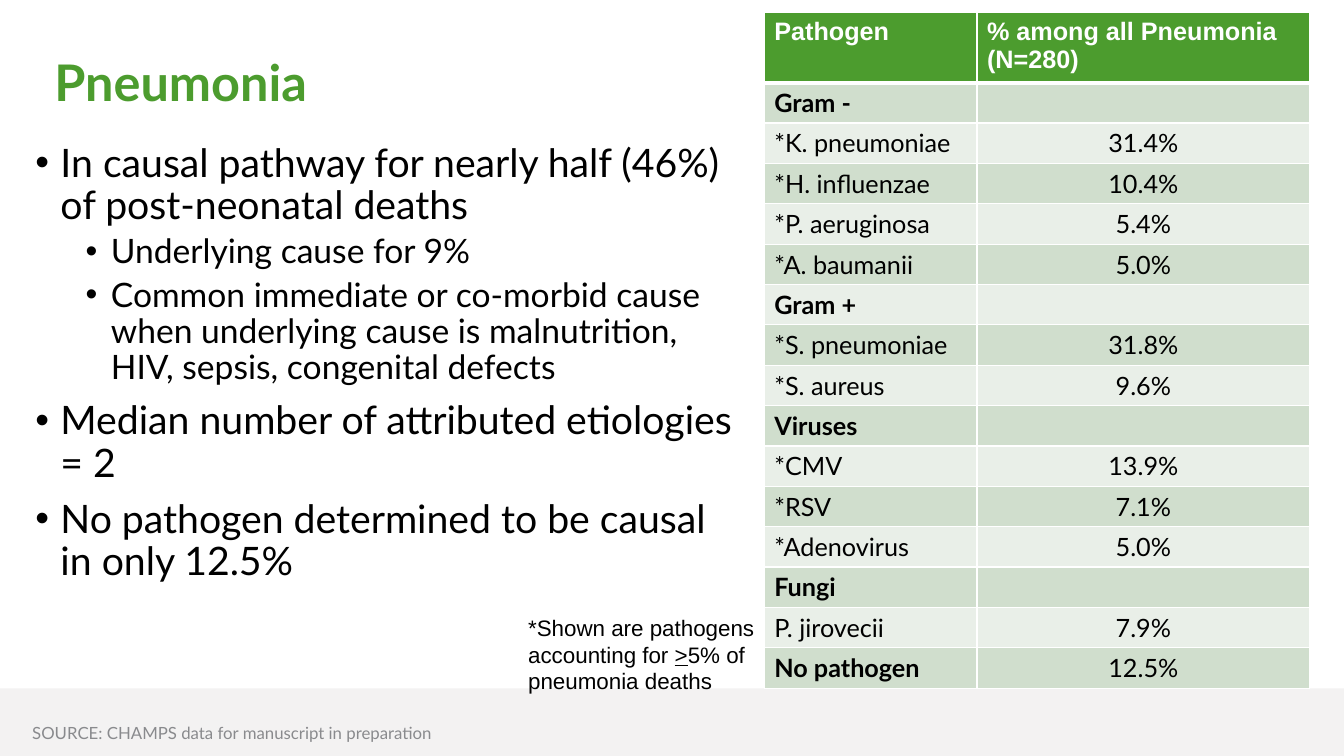
from lxml import etree
from pptx import Presentation
from pptx import util as u
from pptx.dml.color import RGBColor
from pptx.enum import shapes, text
from pptx.oxml import ns

GREEN = RGBColor(0x4C, 0x9C, 0x2E)
BANDS = RGBColor(0xD0, 0xDE, 0xCD), RGBColor(0xE9, 0xEF, 0xE8)
BLACK = RGBColor(0, 0, 0)
WHITE = RGBColor(255, 255, 255)
GRAY = RGBColor(0x89, 0x8A, 0x8D)
STRIP = RGBColor(0xD0, 0xCF, 0xCD)

TITLE = "Pneumonia"
POINTS = [
    (0, "In causal pathway for nearly half (46%) of post-neonatal deaths"),
    (1, "Underlying cause for 9%"),
    (1, "Common immediate or co-morbid cause when underlying cause is "
        "malnutrition, HIV, sepsis, congenital defects"),
    (0, "Median number of attributed etiologies = 2"),
    (0, "No pathogen determined to be causal in only 12.5%"),
]
SOURCE = "SOURCE: CHAMPS data for manuscript in preparation"
NOTE = ["*Shown are pathogens accounting for ", ">", "5% of pneumonia deaths"]
HEAD = ("Pathogen", "% among all Pneumonia (N=280)")
ROWS = [
    ("Gram -", ""),
    ("*K. pneumoniae", "31.4%"),
    ("*H. influenzae", "10.4%"),
    ("*P. aeruginosa", "5.4%"),
    ("*A. baumanii", "5.0%"),
    ("Gram +", ""),
    ("*S. pneumoniae", "31.8%"),
    ("*S. aureus", "9.6%"),
    ("Viruses", ""),
    ("*CMV", "13.9%"),
    ("*RSV", "7.1%"),
    ("*Adenovirus", "5.0%"),
    ("Fungi", ""),
    ("P. jirovecii", "7.9%"),
    ("No pathogen", "12.5%"),
]
COLS = (2.11, 3.3)
HEAD_H, ROW_H = 0.7, 0.4


def place(shape, *box):
    shape.left, shape.top, shape.width, shape.height = map(u.Inches, box)


def style(par, size, color, font="Lato", bold=False):
    for run in par.runs:
        run.font.size = u.Pt(size)
        run.font.name = font
        run.font.bold = bold
        run.font.color.rgb = color


def bullet(par, indent):
    props = par._p.get_or_add_pPr()
    props.set("marL", str(u.Inches(indent)))
    props.set("indent", str(u.Inches(-0.25)))
    etree.SubElement(props, ns.qn("a:buFont")).set("typeface", "Arial")
    etree.SubElement(props, ns.qn("a:buChar")).set("char", "•")


def border(cell, base):
    """Draw white lines round a cell, with the given width below it."""
    props = cell._tc.get_or_add_tcPr()
    for i, (side, width) in enumerate(zip("LRTB", (1, 1, 1, base))):
        line = etree.Element(ns.qn("a:ln" + side), w=str(u.Pt(width)))
        fill = etree.SubElement(line, ns.qn("a:solidFill"))
        etree.SubElement(fill, ns.qn("a:srgbClr")).set("val", str(WHITE))
        props.insert(i, line)


def add_strip(slide):
    strip = slide.shapes.add_shape(
        shapes.MSO_SHAPE.RECTANGLE, 0, u.Inches(6.83), u.Inches(13.33), u.Inches(0.67))
    strip.shadow.inherit = False
    strip.line.fill.background()
    strip.fill.solid()
    strip.fill.fore_color.rgb = STRIP
    color = strip._element.spPr.find(".//" + ns.qn("a:srgbClr"))
    etree.SubElement(color, ns.qn("a:alpha")).set("val", "25000")


def add_title(slide):
    title = slide.shapes.title
    place(title, 0.44, 0.12, 3.73, 1.45)
    frame = title.text_frame
    frame.text = TITLE
    frame.vertical_anchor = text.MSO_ANCHOR.MIDDLE
    par = frame.paragraphs[0]
    par.alignment = text.PP_ALIGN.LEFT
    par.line_spacing = 0.9
    style(par, 36, GREEN, bold=True)


def add_points(slide):
    body = slide.placeholders[1]
    place(body, 0.25, 1.37, 7.13, 4.76)
    frame = body.text_frame
    frame.text = "\n".join(words for _, words in POINTS)
    frame.auto_size = text.MSO_AUTO_SIZE.NONE
    for i, (par, (level, _)) in enumerate(zip(frame.paragraphs, POINTS)):
        par.level = level
        bullet(par, 0.25 + 0.5 * level)
        par.line_spacing = 0.9
        par.space_before = u.Pt((10, 5)[level] if i else 0)
        style(par, (28, 24)[level], BLACK)


def add_table(slide):
    frame = slide.shapes.add_table(
        len(ROWS) + 1, len(COLS), u.Inches(7.58), u.Inches(0.12),
        u.Inches(sum(COLS)), u.Inches(HEAD_H + ROW_H * len(ROWS)))
    table = frame.table
    table.horz_banding = False
    for col, width in zip(table.columns, COLS):
        col.width = u.Inches(width)
    for r, row in enumerate([HEAD] + ROWS):
        head = r == 0
        table.rows[r].height = u.Inches(HEAD_H if head else ROW_H)
        for c, words in enumerate(row):
            cell = table.cell(r, c)
            cell.fill.solid()
            cell.fill.fore_color.rgb = GREEN if head else BANDS[(r - 1) % 2]
            border(cell, 3 if head else 1)
            if not words:
                cell.margin_top = cell.margin_bottom = 0
                continue
            cell.text_frame.text = words
            par = cell.text_frame.paragraphs[0]
            group = c == 0 and (not row[1] or words == "No pathogen")
            if head:
                style(par, 18, WHITE, "Arial", True)
            else:
                style(par, 18, BLACK, bold=group)
                if c:
                    par.alignment = text.PP_ALIGN.CENTER


def add_source(slide):
    box = slide.shapes.add_textbox(0, 0, 0, 0)
    place(box, 0.32, 7.17, 4.64, 0.2)
    frame = box.text_frame
    frame.margin_left = frame.margin_right = 0
    frame.margin_top = frame.margin_bottom = 0
    frame.word_wrap = False
    frame.text = SOURCE
    style(frame.paragraphs[0], 12, GRAY)


def add_note(slide):
    box = slide.shapes.add_textbox(0, 0, 0, 0)
    place(box, 5.14, 6.04, 2.54, 0.91)
    frame = box.text_frame
    frame.word_wrap = True
    par = frame.paragraphs[0]
    for part in NOTE:
        run = par.add_run()
        run.text = part
        run.font.underline = part == ">"
    style(par, 16, BLACK, "Arial")


def main():
    deck = Presentation()
    deck.slide_width, deck.slide_height = u.Inches(13.33), u.Inches(7.5)
    slide = deck.slides.add_slide(deck.slide_layouts[1])
    for add in (add_strip, add_title, add_points, add_source, add_table, add_note):
        add(slide)
    deck.save("out.pptx")


if __name__ == "__main__":
    main()
